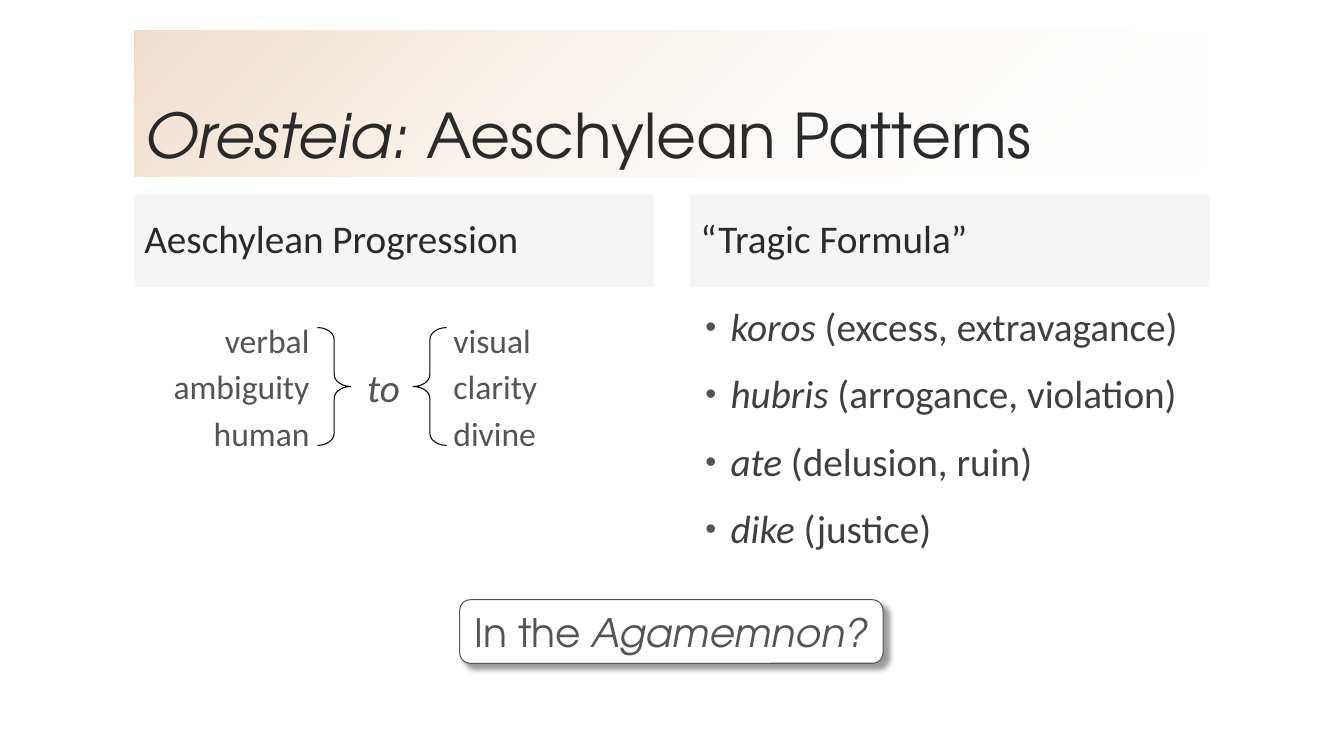
from lxml.etree import SubElement
from pptx import Presentation
from pptx.dml.color import RGBColor
from pptx.enum.shapes import MSO_SHAPE
from pptx.enum.text import MSO_ANCHOR, MSO_AUTO_SIZE, PP_ALIGN
from pptx.oxml.ns import qn
from pptx.util import Pt

INK = RGBColor(0x2A, 0x2A, 0x2A)
BODY = RGBColor(0x3F, 0x3F, 0x3F)
GREY = RGBColor(0x54, 0x54, 0x54)
SILVER = RGBColor(0xBF, 0xBF, 0xBF)
TAN = RGBColor(0xCE, 0x9F, 0x71)
WHITE = RGBColor(0xFF, 0xFF, 0xFF)
BLACK = RGBColor(0, 0, 0)
DISPLAY = "TeX Gyre Adventor"
TEXT = "Calibri"

deck = Presentation()
deck.slide_width, deck.slide_height = Pt(960), Pt(540)
slide = deck.slides.add_slide(deck.slide_layouts[6])
shapes = slide.shapes


def write(text, *, box, size, colour, font=TEXT, preset=None, align=PP_ALIGN.LEFT,
          anchor=MSO_ANCHOR.MIDDLE, wrap=True, leading=1.0, before=0):
    place = [Pt(length) for length in box]
    holder = shapes.add_shape(preset, *place) if preset else shapes.add_textbox(*place)
    if preset:
        holder.shadow.inherit = False
        holder.line.fill.background()
    frame = holder.text_frame
    frame.word_wrap = wrap
    frame.auto_size = MSO_AUTO_SIZE.NONE if wrap else MSO_AUTO_SIZE.SHAPE_TO_FIT_TEXT
    frame.vertical_anchor = anchor
    for number, line in enumerate(text.split("\n")):
        paragraph = frame.paragraphs[0] if number == 0 else frame.add_paragraph()
        paragraph.alignment = align
        paragraph.line_spacing = leading
        paragraph.space_before = Pt(before)
        for part, words in enumerate(line.split("*")):
            if words:
                run = paragraph.add_run()
                run.text = words
                run.font.name = font
                run.font.size = Pt(size)
                run.font.color.rgb = colour
                run.font.italic = part % 2 == 1
    return holder


def set_opacity(fill_xml, percents):
    for colour_xml, percent in zip(fill_xml.iter(qn("a:srgbClr")), percents):
        SubElement(colour_xml, qn("a:alpha"), val=str(percent * 1000))


title = write("*Oresteia:* Aeschylean Patterns", box=(96, 21.6, 768, 104.4), size=44,
              colour=INK, font=DISPLAY, preset=MSO_SHAPE.RECTANGLE,
              anchor=MSO_ANCHOR.BOTTOM, leading=0.9)
title.fill.gradient()
title.fill.gradient_angle = 315
for stop, shade in zip(title.fill.gradient_stops, (TAN, WHITE)):
    stop.color.rgb = shade
set_opacity(title._element.spPr.find(qn("a:gradFill")), (34, 0))

for left, heading in ((96, "Aeschylean Progression"), (493.2, "“Tragic Formula”")):
    header = write(heading, box=(left, 139, 370.8, 66), size=28, colour=INK,
                   preset=MSO_SHAPE.RECTANGLE, leading=0.9)
    header.fill.solid()
    header.fill.fore_color.rgb = SILVER
    set_opacity(header._element.spPr.find(qn("a:solidFill")), (15,))

formula = write("*koros* (excess, extravagance)\n*hubris* (arrogance, violation)\n"
                "*ate* (delusion, ruin)\n*dike* (justice)",
                box=(493.2, 216, 370.8, 270), size=28, colour=BODY,
                anchor=MSO_ANCHOR.TOP, leading=0.9, before=18)
for paragraph in formula.text_frame.paragraphs:
    properties = paragraph._p.get_or_add_pPr()
    properties.set("marL", str(Pt(21.6)))
    properties.set("indent", str(Pt(-18)))
    bullet_colour = SubElement(properties, qn("a:buClr"))
    SubElement(bullet_colour, qn("a:srgbClr"), val=str(GREY))
    SubElement(properties, qn("a:buSzPct"), val="80000")
    SubElement(properties, qn("a:buFont"), typeface="Arial")
    SubElement(properties, qn("a:buChar"), char="•")

question = write("In the *Agamemnon?*", box=(328.4, 428.4, 302.4, 45.4), size=28,
                 colour=GREY, font=DISPLAY, preset=MSO_SHAPE.ROUNDED_RECTANGLE,
                 align=PP_ALIGN.CENTER, wrap=False)
question.fill.solid()
question.fill.fore_color.rgb = WHITE
question.line.color.rgb = GREY
question.line.width = Pt(0.75)
effects = question._element.spPr.find(qn("a:effectLst"))
shadow = SubElement(effects, qn("a:outerShdw"), blurRad=str(Pt(4)), dist=str(Pt(5)),
                    dir="2700000", algn="tl", rotWithShape="0")
SubElement(shadow, qn("a:srgbClr"), val=str(BLACK))
set_opacity(shadow, (40,))

for words, left, width, align in (
        ("verbal\nambiguity\nhuman", 115.9, 112.3, PP_ALIGN.RIGHT),
        ("visual\nclarity\ndivine", 316.8, 74.9, PP_ALIGN.LEFT)):
    write(words, box=(left, 223.2, width, 105.8), size=24, colour=GREY,
          align=align, wrap=False, before=4.5)
write("*to*", box=(254.9, 255.6, 38.2, 41), size=28, colour=GREY,
      align=PP_ALIGN.CENTER, wrap=False)

for preset, left in ((MSO_SHAPE.RIGHT_BRACE, 226.8), (MSO_SHAPE.LEFT_BRACE, 295.2)):
    brace = shapes.add_shape(preset, Pt(left), Pt(234), Pt(23.8), Pt(84.2))
    brace.shadow.inherit = False
    brace.fill.background()
    brace.line.color.rgb = BLACK
    brace.line.width = Pt(0.75)
    brace.adjustments[0] = 0.36

deck.save("out.pptx")
